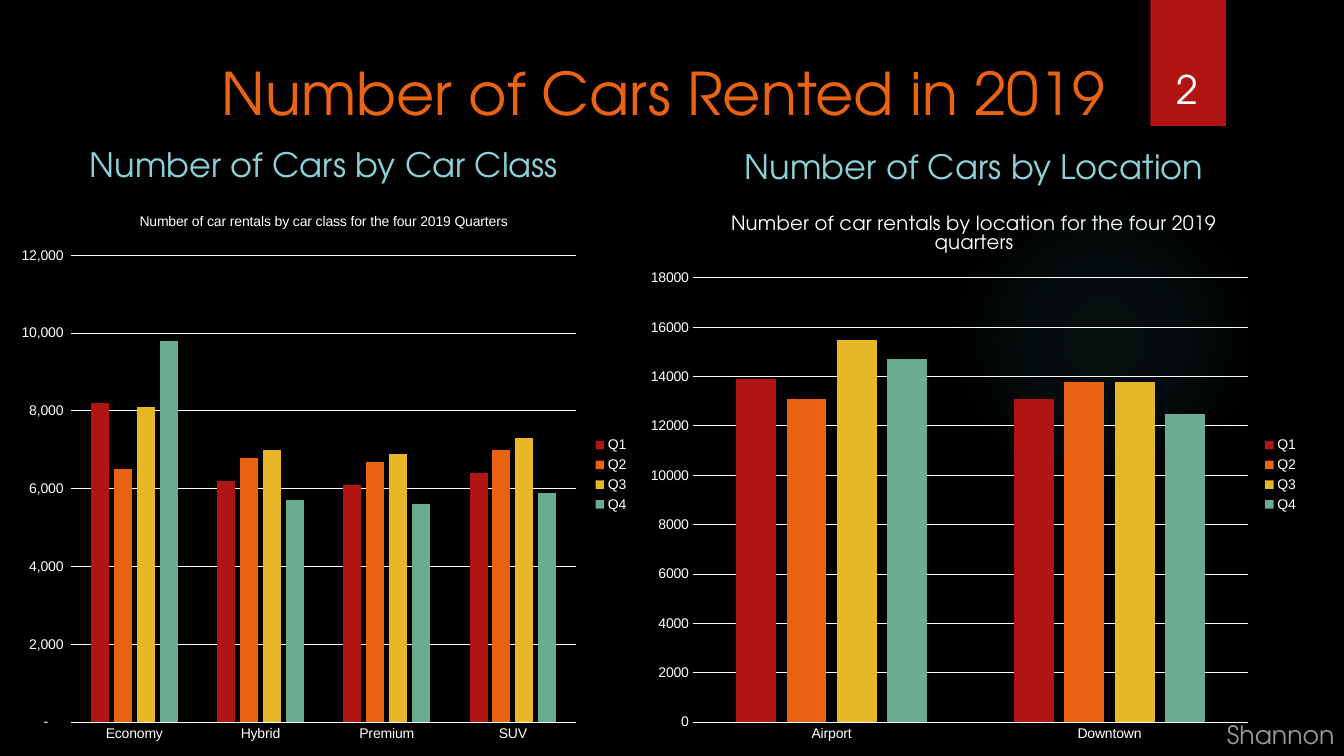
import pptx
import pptx.util
import pptx.oxml
import pptx.oxml.ns
import pptx.chart.data
import pptx.dml.color
import pptx.enum.chart
import pptx.enum.shapes
import pptx.enum.text

Inches = pptx.util.Inches
Pt = pptx.util.Pt
RGBColor = pptx.dml.color.RGBColor
qn = pptx.oxml.ns.qn
Anchor = pptx.enum.text.MSO_ANCHOR
Align = pptx.enum.text.PP_ALIGN
Mark = pptx.enum.chart.XL_TICK_MARK

BLACK = RGBColor(0x00, 0x00, 0x00)
WHITE = RGBColor(0xFF, 0xFF, 0xFF)
RED = RGBColor(0xB0, 0x15, 0x13)
ORANGE = RGBColor(0xEA, 0x63, 0x12)
GOLD = RGBColor(0xE6, 0xB7, 0x29)
GREEN = RGBColor(0x6A, 0xAC, 0x90)
SKY = RGBColor(0x8A, 0xD0, 0xD6)
TEAL = RGBColor(0x50, 0xB9, 0xC1)

HEAD = "TeX Gyre Adventor"
PLAIN = "Arial"
COMMA = r'_(* #,##0_);_(* \(#,##0\);_(* "-"??_);_('

CLASSES = ["Economy", "Hybrid", "Premium", "SUV"]
BY_CLASS = {
    "Q1": [8200, 6200, 6100, 6400],
    "Q2": [6500, 6800, 6700, 7000],
    "Q3": [8100, 7000, 6900, 7300],
    "Q4": [9800, 5700, 5600, 5900],
}
PLACES = ["Airport", "Downtown"]
BY_PLACE = {
    "Q1": [13900, 13100],
    "Q2": [13100, 13800],
    "Q3": [15500, 13800],
    "Q4": [14700, 12500],
}


def style(font, face, size, color):
    font.name = face
    font.size = Pt(size)
    font.bold = False
    font.color.rgb = color


def add_shape(slide, kind, box, color):
    shape = slide.shapes.add_shape(kind, *map(Inches, box))
    shape.shadow.inherit = False
    shape.line.fill.background()
    shape.fill.solid()
    shape.fill.fore_color.rgb = color
    return shape


def add_glow(slide, box):
    glow = add_shape(slide, pptx.enum.shapes.MSO_SHAPE.OVAL, box, TEAL)
    stops = "".join(
        f'<a:gs pos="{pos * 1000}"><a:srgbClr val="{TEAL}">'
        f'<a:alpha val="{alpha * 1000}"/></a:srgbClr></a:gs>'
        for pos, alpha in [(0, 7), (36, 6), (69, 0), (100, 0)]
    )
    grad = pptx.oxml.parse_xml(
        f'<a:gradFill {pptx.oxml.ns.nsdecls("a")}><a:gsLst>{stops}</a:gsLst>'
        '<a:path path="circle"><a:fillToRect l="50000" t="50000" '
        'r="50000" b="50000"/></a:path></a:gradFill>'
    )
    props = glow._element.spPr
    props.replace(props.find(qn("a:solidFill")), grad)


def add_text(slide, box, text, size, color, anchor=Anchor.BOTTOM, align=Align.CENTER):
    frame = slide.shapes.add_textbox(*map(Inches, box)).text_frame
    frame.word_wrap = True
    frame.vertical_anchor = anchor
    frame.text = text
    para = frame.paragraphs[0]
    para.alignment = align
    run = para.runs[0]
    style(run.font, HEAD, size, color)
    return run


def fade(run, alpha):
    color = run._r.rPr.find(".//" + qn("a:srgbClr"))
    color.append(pptx.oxml.parse_xml(
        f'<a:alpha {pptx.oxml.ns.nsdecls("a")} val="{alpha * 1000}"/>'))


def set_plot(chart, area):
    parts = "".join(
        f'<c:{tag} val="{val}"/>' for tag, val in zip("xywh", area))
    layout = pptx.oxml.parse_xml(
        f'<c:layout {pptx.oxml.ns.nsdecls("c")}><c:manualLayout>'
        '<c:layoutTarget val="inner"/><c:xMode val="edge"/>'
        f'<c:yMode val="edge"/>{parts}</c:manualLayout></c:layout>'
    )
    plot = chart._chartSpace.chart.plotArea
    old = plot.find(qn("c:layout"))
    if old is not None:
        plot.remove(old)
    plot.insert(0, layout)


def style_axis(axis):
    axis.major_tick_mark = axis.minor_tick_mark = Mark.NONE
    style(axis.tick_labels.font, PLAIN, 10, WHITE)


def add_chart(slide, box, title, face, size, cats, rows, top, step, code, area):
    data = pptx.chart.data.CategoryChartData(number_format=code)
    data.categories = cats
    for name, vals in rows.items():
        data.add_series(name, vals)
    kind = pptx.enum.chart.XL_CHART_TYPE.COLUMN_CLUSTERED
    chart = slide.shapes.add_chart(kind, *map(Inches, box), data).chart
    style(chart.font, HEAD, 10, WHITE)

    chart.has_title = True
    frame = chart.chart_title.text_frame
    frame.text = title
    style(frame.paragraphs[0].runs[0].font, face, size, WHITE)
    chart.chart_title.include_in_layout = False

    chart.has_legend = True
    chart.legend.position = pptx.enum.chart.XL_LEGEND_POSITION.RIGHT
    chart.legend.include_in_layout = False
    style(chart.legend.font, PLAIN, 10, WHITE)

    plot = chart.plots[0]
    plot.gap_width = 219
    plot.overlap = -27
    plot.vary_by_categories = False
    for series, color in zip(plot.series, [RED, ORANGE, GOLD, GREEN]):
        series.format.fill.solid()
        series.format.fill.fore_color.rgb = color

    style_axis(chart.category_axis)
    style_axis(chart.value_axis)
    values = chart.value_axis
    values.minimum_scale = 0
    values.maximum_scale = top
    values.major_unit = step
    values.tick_labels.number_format = code
    values.tick_labels.number_format_is_linked = False
    values.format.line.fill.background()
    for line in (chart.category_axis.format.line, values.major_gridlines.format.line):
        line.color.rgb = WHITE
        line.width = Pt(0.75)
    set_plot(chart, area)


def main():
    deck = pptx.Presentation()
    deck.slide_width = Inches(13.33)
    deck.slide_height = Inches(7.5)
    slide = deck.slides.add_slide(deck.slide_layouts[6])
    slide.background.fill.solid()
    slide.background.fill.fore_color.rgb = BLACK

    add_glow(slide, (9.41, 1.83, 3.08, 3.08))
    add_shape(slide, pptx.enum.shapes.MSO_SHAPE.RECTANGLE, (11.41, 0, 0.75, 1.25), RED)
    add_text(slide, (1.96, 0.51, 9.23, 0.92), "Number of Cars Rented in 2019",
             42, ORANGE, Anchor.TOP)
    add_text(slide, (0.08, 1.25, 6.26, 0.63), "Number of Cars by Car Class", 24, SKY)
    add_chart(slide, (0.08, 1.92, 6.26, 5.58),
              "Number of car rentals by car class for the four 2019 Quarters",
              PLAIN, 10, CLASSES, BY_CLASS, 12000, 2000, COMMA,
              (0.1, 0.11, 0.8, 0.83))
    add_text(slide, (6.34, 1.27, 6.64, 0.63), "Number of Cars by Location", 24, SKY)
    add_chart(slide, (6.34, 1.92, 6.64, 5.58),
              "Number of car rentals by location for the four 2019 quarters",
              HEAD, 14, PLACES, BY_PLACE, 18000, 2000, "General",
              (0.08, 0.15, 0.83, 0.79))
    name = add_text(slide, (12.07, 7.08, 1.46, 0.41), "Shannon", 18, WHITE,
                    align=Align.LEFT)
    fade(name, 60)
    add_text(slide, (11.32, 0.32, 0.92, 0.84), "2", 28, WHITE)
    deck.save("out.pptx")


if __name__ == "__main__":
    main()
